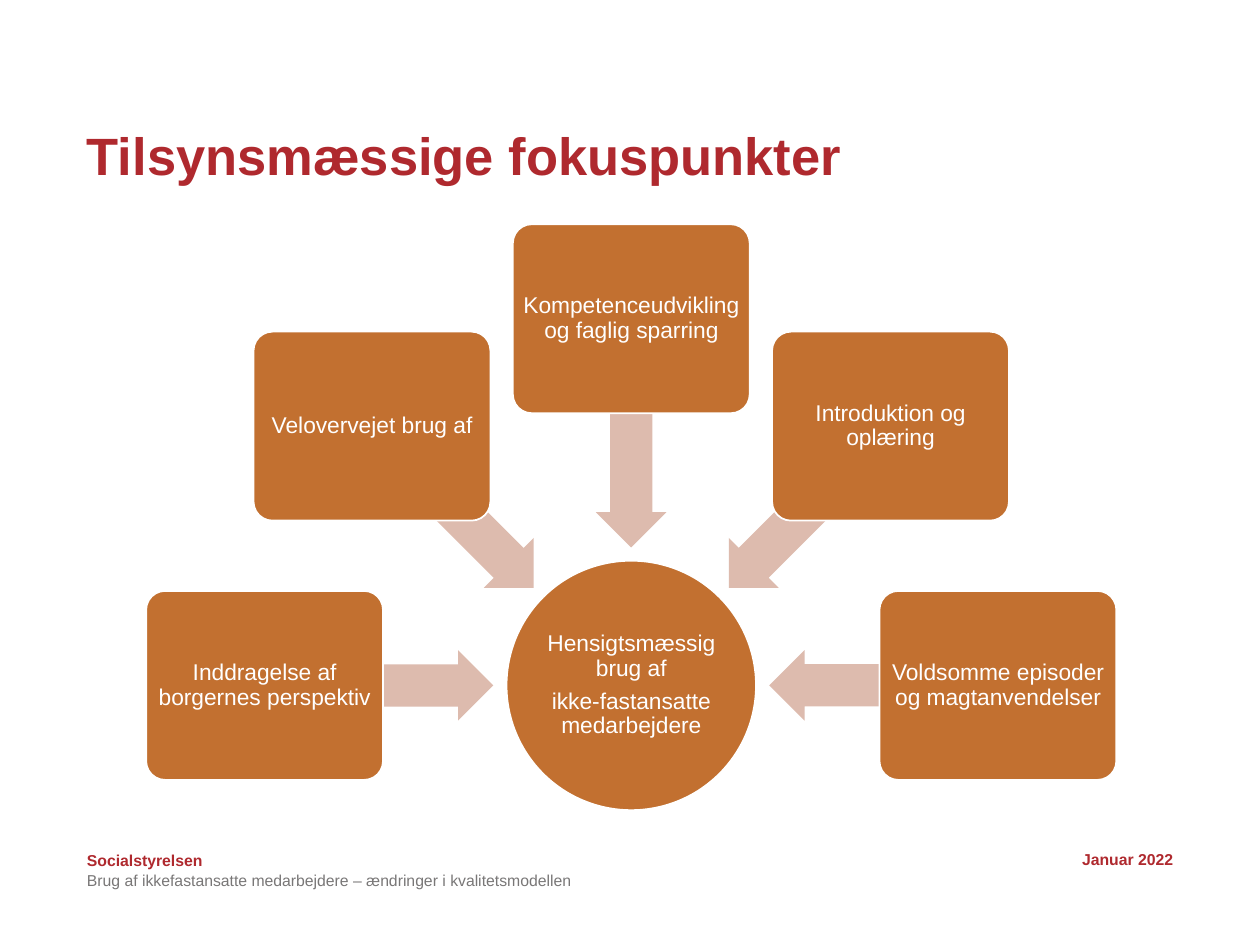
from math import cos, radians, sin

from lxml.etree import SubElement
from pptx import Presentation
from pptx.dml.color import RGBColor
from pptx.enum.shapes import MSO_SHAPE
from pptx.enum.text import MSO_ANCHOR, PP_ALIGN
from pptx.oxml.ns import qn
from pptx.util import Inches, Pt

COLORS = {"red": "AF292E", "grey": "797777", "orange": "C27030",
          "arrow": "DDBBAE", "white": "FFFFFF"}
SLIDE_W, SLIDE_H = 10, 7.5
LEFT = 0.69
HUB_X, HUB_Y, HUB_D = 5.01, 5.44, 1.98
BOX_W, BOX_H, BOX_RADIUS = 1.88, 1.5, 2.91
ARROW_W, ARROW_H, ARROW_RADIUS = 1.81, 0.56, 2.0
LABEL = {"size": Pt(13), "color": "white", "align": PP_ALIGN.CENTER,
         "spacing": 0.9, "after": Pt(4.5)}


def write(sp, lines, inset=0, anchor=MSO_ANCHOR.MIDDLE, size=Pt(9), bold=False,
          color="red", align=PP_ALIGN.LEFT, spacing=1.0, after=Pt(0)):
    tf = sp.text_frame
    frame = {"word_wrap": True, "vertical_anchor": anchor}
    frame |= {f"margin_{side}": Inches(inset) for side in ("left", "top", "right", "bottom")}
    for name, value in frame.items():
        setattr(tf, name, value)
    for i, line in enumerate(lines):
        p = tf.paragraphs[0] if i == 0 else tf.add_paragraph()
        r = p.add_run()
        r.text = line
        for name, value in {"alignment": align, "line_spacing": spacing,
                            "space_after": after}.items():
            setattr(p, name, value)
        for name, value in {"name": "Arial", "size": size, "bold": bold}.items():
            setattr(r.font, name, value)
        r.font.color.rgb = RGBColor.from_string(COLORS[color])


def add_centred(kind, x, y, w, h, fill, outlined=True):
    """Add a preset shape to the slide with its centre at x, y."""
    sp = s.shapes.add_shape(kind, Inches(x - w / 2), Inches(y - h / 2), Inches(w), Inches(h))
    sp.shadow.inherit = False
    sp.fill.solid()
    sp.fill.fore_color.rgb = RGBColor.from_string(COLORS[fill])
    if outlined:
        sp.line.color.rgb = RGBColor.from_string(COLORS["white"])
        sp.line.width = Pt(1)
    else:
        sp.line.fill.background()
    return sp


prs = Presentation()
prs.slide_width, prs.slide_height = Inches(SLIDE_W), Inches(SLIDE_H)
s = prs.slides.add_slide(prs.slide_layouts[6])

# Title and footer
texts = [
    ("Tilsynsmæssige fokuspunkter", (LEFT, 0.84, 8.64, 0.83),
     {"size": Pt(30), "bold": True, "spacing": 0.9}),
    ("Socialstyrelsen", (LEFT, 6.75, 1.18, 0.15), {"bold": True, "anchor": MSO_ANCHOR.TOP}),
    ("Brug af ikkefastansatte medarbejdere – ændringer i kvalitetsmodellen",
     (LEFT, 6.86, 5.21, 0.2), {"color": "grey", "anchor": MSO_ANCHOR.BOTTOM}),
    ("Januar 2022", (7.06, 6.62, 2.25, 0.4), {"bold": True, "align": PP_ALIGN.RIGHT}),
]
for text, place, style in texts:
    write(s.shapes.add_textbox(*map(Inches, place)), [text], **style)

# Hub
hub = add_centred(MSO_SHAPE.OVAL, HUB_X, HUB_Y, HUB_D, HUB_D, "orange")
write(hub, ["Hensigtsmæssig brug af", "ikke-fastansatte medarbejdere"], inset=0.01, **LABEL)

# Focus points every 45 degrees around the hub, clockwise from the left
focus_points = [
    "Inddragelse af borgernes perspektiv",
    "Velovervejet brug af",
    "Kompetenceudvikling og faglig sparring",
    "Introduktion og oplæring",
    "Voldsomme episoder og magtanvendelser",
]
for i, text in enumerate(focus_points):
    angle = 180 + 45 * i
    dx, dy = cos(radians(angle)), sin(radians(angle))
    arrow = add_centred(MSO_SHAPE.LEFT_ARROW, HUB_X + ARROW_RADIUS * dx,
                        HUB_Y + ARROW_RADIUS * dy, ARROW_W, ARROW_H, "arrow", outlined=False)
    arrow.rotation = angle % 360
    arrow.adjustments[0], arrow.adjustments[1] = 0.6, 0.5
    box = add_centred(MSO_SHAPE.ROUNDED_RECTANGLE, HUB_X + BOX_RADIUS * dx,
                      HUB_Y + BOX_RADIUS * dy, BOX_W, BOX_H, "orange")
    box.adjustments[0] = 0.1
    write(box, [text], inset=0.03, **LABEL)

# The last paragraph of a label needs no space after it
for sp in s.shapes:
    sp.text_frame.paragraphs[-1].space_after = Pt(0)

prs.save("out.pptx")
